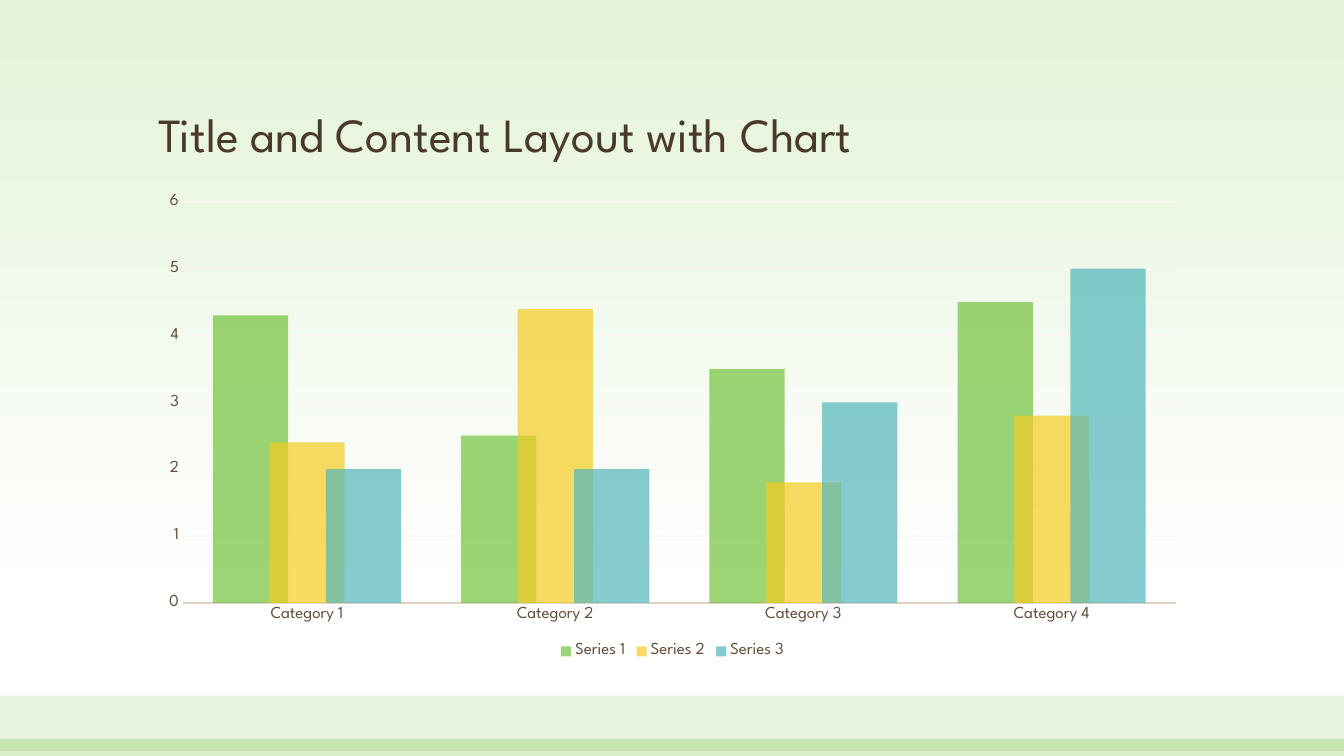
from dataclasses import dataclass

from lxml.etree import SubElement
from pptx import Presentation
from pptx.chart.data import CategoryChartData
from pptx.dml.color import RGBColor
from pptx.enum.chart import XL_CHART_TYPE, XL_LEGEND_POSITION, XL_TICK_MARK
from pptx.enum.shapes import MSO_SHAPE
from pptx.enum.text import MSO_ANCHOR, MSO_AUTO_SIZE, PP_ALIGN
from pptx.oxml.ns import qn
from pptx.util import Inches, Pt


@dataclass(frozen=True)
class Theme:
    font: str = "League Spartan"
    title_color: str = "4A3A2A"
    text_color: str = "624D38"
    green: str = "72C23C"
    yellow: str = "F4CC20"
    teal: str = "53B6BB"
    sky: str = "E3F3D8"
    ground: str = "FFFFFF"
    axis_line: str = "DFD2C6"
    gridline: str = "F9F6F4"
    title_size: int = 34
    chart_size: int = 12
    bar_opacity: int = 70


class SlideBuilder:
    """Holds the theme and the current slide."""

    def __init__(self, slide, theme):
        self.slide = slide
        self.theme = theme

    def set_font(self, font, size, color):
        font.name = self.theme.font
        font.size = Pt(size)
        font.bold = False
        font.color.rgb = RGBColor.from_string(color)

    def set_line(self, line, color, width):
        line.color.rgb = RGBColor.from_string(color)
        line.width = Pt(width)

    def set_fill(self, fill, element, color, opacity):
        fill.solid()
        fill.fore_color.rgb = RGBColor.from_string(color)
        color_element = next(element.iter(qn("a:srgbClr")))
        SubElement(color_element, qn("a:alpha"), val=str(opacity * 1000))

    def background(self):
        fill = self.slide.background.fill
        fill.gradient()
        fill.gradient_angle = 270
        stops = ((0, self.theme.sky), (0.79, self.theme.ground))
        for stop, (position, color) in zip(fill.gradient_stops, stops):
            stop.position = position
            stop.color.rgb = RGBColor.from_string(color)

    def band(self, top, height, opacity):
        shape = self.slide.shapes.add_shape(
            MSO_SHAPE.RECTANGLE, 0, Inches(top), Inches(13.33), Inches(height))
        shape.shadow.inherit = False
        shape.line.fill.background()
        self.set_fill(shape.fill, shape.element, self.theme.green, opacity)

    def title(self, text, left, top, width, height):
        shape = self.slide.shapes.title
        shape.left, shape.top = Inches(left), Inches(top)
        shape.width, shape.height = Inches(width), Inches(height)
        frame = shape.text_frame
        frame.text = text
        frame.word_wrap = True
        frame.auto_size = MSO_AUTO_SIZE.NONE
        frame.vertical_anchor = MSO_ANCHOR.BOTTOM
        paragraph = frame.paragraphs[0]
        paragraph.alignment = PP_ALIGN.LEFT
        paragraph.line_spacing = 0.9
        self.set_font(paragraph.font, self.theme.title_size, self.theme.title_color)

    def column_chart(self, categories, series_values, colors, left, top, width, height):
        theme = self.theme
        data = CategoryChartData()
        data.categories = categories
        for name, values in series_values.items():
            data.add_series(name, values)
        chart = self.slide.shapes.add_chart(
            XL_CHART_TYPE.COLUMN_CLUSTERED, Inches(left), Inches(top),
            Inches(width), Inches(height), data).chart
        chart.has_title = False
        self.set_font(chart.font, theme.chart_size, theme.text_color)

        # Columns
        plot = chart.plots[0]
        plot.gap_width = 80
        plot.overlap = 25
        plot.vary_by_categories = False
        for series, color in zip(plot.series, colors):
            series.invert_if_negative = False
            self.set_fill(series.format.fill, series._element, color, theme.bar_opacity)

        # Axes
        for axis in (chart.category_axis, chart.value_axis):
            axis.major_tick_mark = axis.minor_tick_mark = XL_TICK_MARK.NONE
            self.set_font(axis.tick_labels.font, theme.chart_size, theme.text_color)
        self.set_line(chart.category_axis.format.line, theme.axis_line, 1.25)
        value_axis = chart.value_axis
        value_axis.minimum_scale, value_axis.maximum_scale = 0, 6
        value_axis.major_unit = 1
        value_axis.format.line.fill.background()
        value_axis.has_major_gridlines = True
        self.set_line(value_axis.major_gridlines.format.line, theme.gridline, 0.75)

        # Legend
        chart.has_legend = True
        chart.legend.position = XL_LEGEND_POSITION.BOTTOM
        chart.legend.include_in_layout = False
        self.set_font(chart.legend.font, theme.chart_size, theme.text_color)


def main():
    presentation = Presentation()
    presentation.slide_width = Inches(13.33)
    presentation.slide_height = Inches(7.5)
    theme = Theme()
    title_only = presentation.slide_layouts[5]
    builder = SlideBuilder(presentation.slides.add_slide(title_only), theme)

    # Backdrop with two overlapping ground bands
    builder.background()
    builder.band(top=6.9, height=0.55, opacity=17)
    builder.band(top=7.33, height=0.17, opacity=28)

    # Content
    builder.title("Title and Content Layout with Chart", 1.47, 0.48, 10.4, 1.19)
    builder.column_chart(
        [f"Category {number}" for number in range(1, 5)],
        {
            "Series 1": (4.3, 2.5, 3.5, 4.5),
            "Series 2": (2.4, 4.4, 1.8, 2.8),
            "Series 3": (2, 2, 3, 5),
        },
        (theme.green, theme.yellow, theme.teal),
        1.47, 1.83, 10.4, 4.75)

    presentation.save("out.pptx")


if __name__ == "__main__":
    main()
